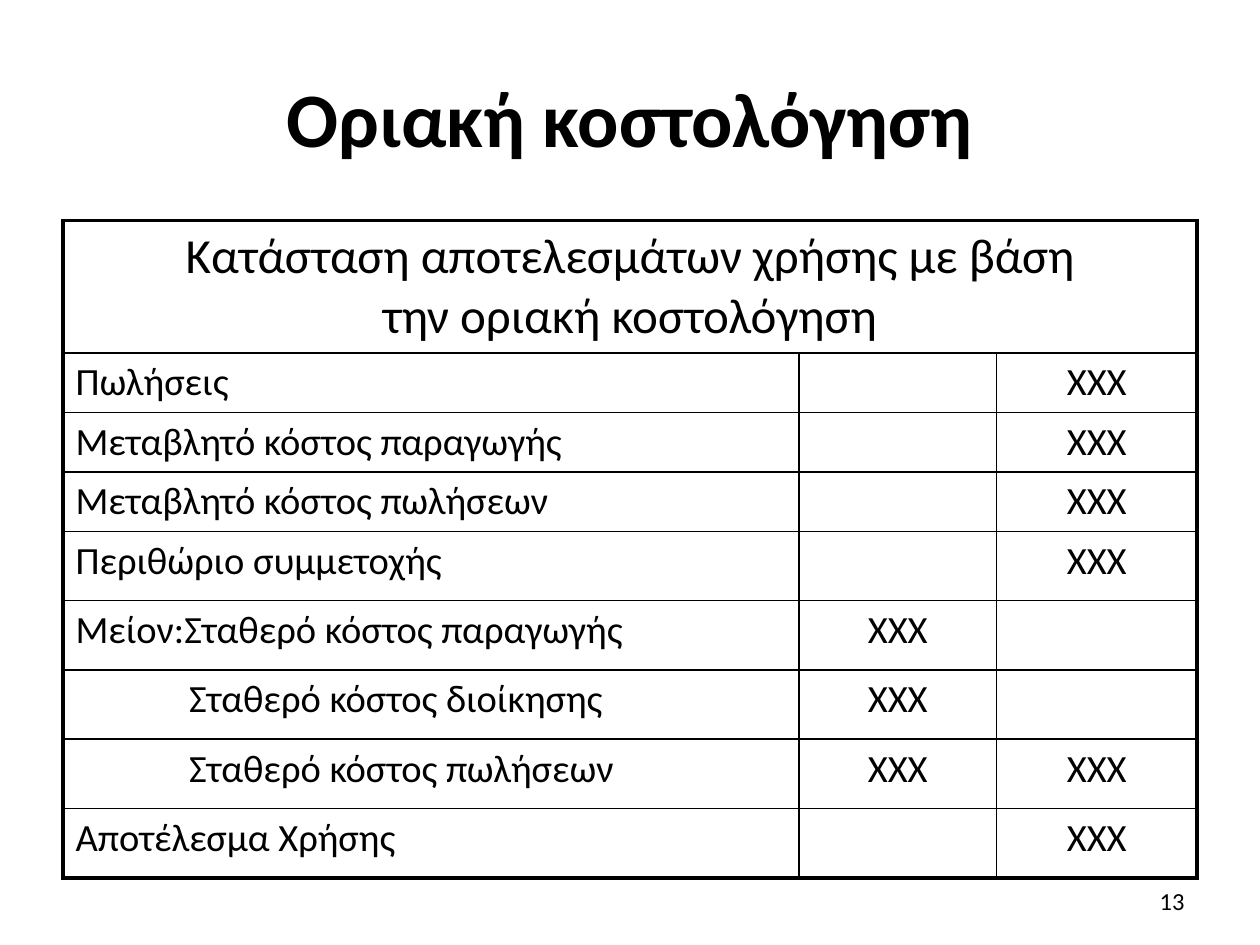
from typing import NamedTuple

from lxml.etree import SubElement
from pptx import Presentation
from pptx.dml.color import RGBColor
from pptx.enum.text import MSO_ANCHOR, PP_ALIGN
from pptx.oxml.ns import qn
from pptx.util import Inches, Pt

BLACK = RGBColor(0, 0, 0)
FONT = "Calibri"
THIN, THICK = 1, 2.25
AMOUNT = "ΧΧΧ"
COLUMN_WIDTHS = (5.84, 1.57, 1.59)
HEADER_HEIGHT = 1.05
HEADER_LINES = ("Κατάσταση αποτελεσμάτων χρήσης με βάση", "την οριακή κοστολόγηση")


class StatementRow(NamedTuple):
    label: str
    partial: str
    total: str
    height: float = 0.55
    indent: float = 0


ROWS = (
    StatementRow("Πωλήσεις", "", AMOUNT, 0.47),
    StatementRow("Μεταβλητό κόστος παραγωγής", "", AMOUNT, 0.47),
    StatementRow("Μεταβλητό κόστος πωλήσεων", "", AMOUNT, 0.47),
    StatementRow("Περιθώριο συμμετοχής", "", AMOUNT),
    StatementRow("Μείον:Σταθερό κόστος παραγωγής", AMOUNT, ""),
    StatementRow("Σταθερό κόστος διοίκησης", AMOUNT, "", indent=0.9),
    StatementRow("Σταθερό κόστος πωλήσεων", AMOUNT, AMOUNT, indent=0.9),
    StatementRow("Αποτέλεσμα Χρήσης", "", AMOUNT),
)


def write(text_frame, lines: tuple, size: float, alignment, bold: bool = False) -> None:
    paragraph = text_frame.paragraphs[0]
    paragraph.alignment = alignment
    for number, line in enumerate(lines):
        if number:
            paragraph.add_line_break()
        run = paragraph.add_run()
        run.text = line
        run.font.name = FONT
        run.font.size = Pt(size)
        run.font.bold = bold
        run.font.color.rgb = BLACK


def set_borders(cell, left: float, right: float, top: float, bottom: float) -> None:
    """Draw the four cell borders; must run before the fill is set."""
    properties = cell._tc.get_or_add_tcPr()
    widths = {"a:lnL": left, "a:lnR": right, "a:lnT": top, "a:lnB": bottom}
    for tag, width in widths.items():
        line = SubElement(properties, qn(tag), w=str(Pt(width)))
        fill = SubElement(line, qn("a:solidFill"))
        SubElement(fill, qn("a:srgbClr"), val=str(BLACK))


def add_statement(slide) -> None:
    row_count, column_count = len(ROWS) + 1, len(COLUMN_WIDTHS)
    heights = [HEADER_HEIGHT] + [row.height for row in ROWS]
    table = slide.shapes.add_table(
        row_count, column_count, Inches(0.5), Inches(1.75),
        Inches(sum(COLUMN_WIDTHS)), Inches(sum(heights)),
    ).table
    table.first_row = False
    table.horz_banding = False
    for column, width in zip(table.columns, COLUMN_WIDTHS):
        column.width = Inches(width)
    for table_row, height in zip(table.rows, heights):
        table_row.height = Inches(height)

    for row in range(row_count):
        for column in range(column_count):
            cell = table.cell(row, column)
            set_borders(
                cell,
                left=THICK if column == 0 else THIN,
                right=THICK if column == column_count - 1 or row == 0 else THIN,
                top=THICK if row == 0 else THIN,
                bottom=THICK if row == row_count - 1 else THIN,
            )
            cell.fill.background()

    header = table.cell(0, 0)
    header.merge(table.cell(0, column_count - 1))
    write(header.text_frame, HEADER_LINES, 28, PP_ALIGN.CENTER)
    for number, row in enumerate(ROWS, start=1):
        label = table.cell(number, 0)
        label.margin_left = Inches(0.1 + row.indent)
        write(label.text_frame, (row.label,), 22, PP_ALIGN.LEFT)
        for column, amount in enumerate((row.partial, row.total), start=1):
            if amount:
                cell = table.cell(number, column)
                write(cell.text_frame, (amount,), 22, PP_ALIGN.CENTER)


def main() -> None:
    presentation = Presentation()
    presentation.slide_width = Inches(10)
    presentation.slide_height = Inches(7.5)
    slide = presentation.slides.add_slide(presentation.slide_layouts[5])

    title = slide.shapes.title
    title.left, title.top = Inches(0.5), Inches(0.3)
    title.width, title.height = Inches(9), Inches(1.25)
    title.text_frame.vertical_anchor = MSO_ANCHOR.MIDDLE
    write(title.text_frame, ("Οριακή κοστολόγηση",), 44, PP_ALIGN.CENTER, bold=True)

    add_statement(slide)

    page_number = slide.shapes.add_textbox(
        Inches(7.17), Inches(6.95), Inches(2.33), Inches(0.4)
    ).text_frame
    page_number.word_wrap = True
    page_number.vertical_anchor = MSO_ANCHOR.MIDDLE
    write(page_number, ("13",), 14, PP_ALIGN.RIGHT)

    presentation.save("out.pptx")


if __name__ == "__main__":
    main()
